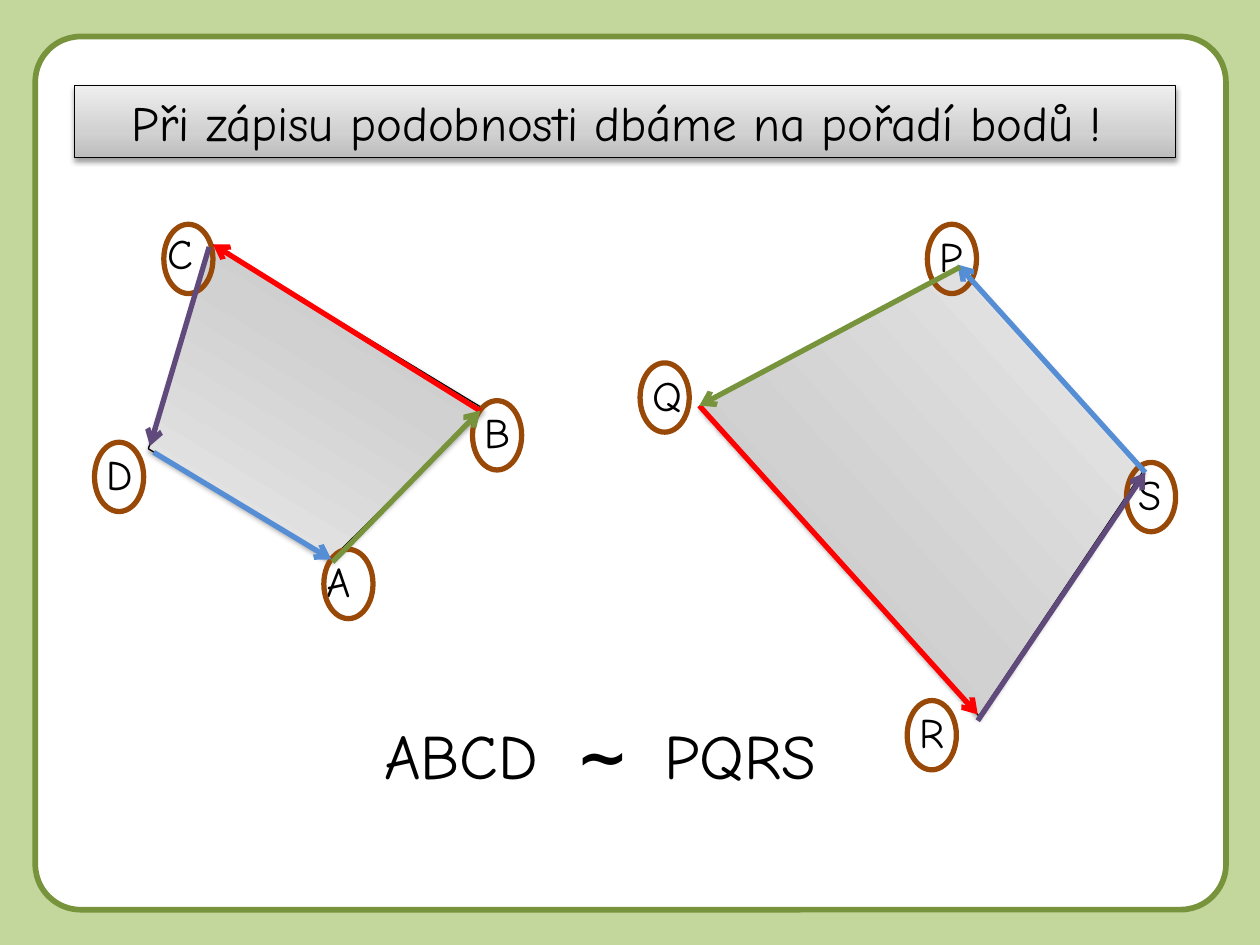
"""Build a slide on the order of points when writing similarity."""
from copy import deepcopy
from typing import NamedTuple

from lxml.etree import SubElement as Sub
from pptx import Presentation as Deck
from pptx.dml.color import RGBColor as Rgb
from pptx.enum.shapes import MSO_CONNECTOR as Link, MSO_SHAPE as Kind
from pptx.enum.text import MSO_ANCHOR as Anchor, MSO_AUTO_SIZE as Fit, PP_ALIGN as Align
from pptx.oxml.ns import qn
from pptx.util import Inches, Pt

COLS, ROWS = 100, 75
WIDE, HIGH = Inches(10), Inches(7.5)
FONT = "Comic Neue"
BLACK, WHITE = Rgb(0, 0, 0), Rgb(255, 255, 255)
PALE = Rgb(0xC3, 0xD6, 0x9B)
GREEN = Rgb(0x77, 0x93, 0x3C)
BROWN = Rgb(0x98, 0x48, 0x07)
RED = Rgb(0xFF, 0, 0)
BLUE = Rgb(0x55, 0x8E, 0xD5)
PURPLE = Rgb(0x60, 0x4A, 0x7B)
STEEL = ((0, Rgb(0xBD, 0xBD, 0xBD)), (0.35, Rgb(0xD1, 0xD1, 0xD1)), (1, Rgb(0xEE, 0xEE, 0xEE)))


class Box(NamedTuple):
    col: float
    row: float
    cols: float
    rows: float

    def size(self) -> tuple[int, ...]:
        return (*place(self.col, self.row), *place(self.cols, self.rows))


class Corner(NamedTuple):
    name: str
    col: float
    row: float
    left: float = 0
    up: float = 0


class Figure(NamedTuple):
    box: Box
    turn: float


class Arrow(NamedTuple):
    start: tuple[float, float]
    end: tuple[float, float]
    color: Rgb


CORNERS = (
    Corner("A", 25.7, 43.6, 0.8), Corner("B", 37.5, 31.8),
    Corner("C", 13, 17.8, 0.7, 0.2), Corner("D", 7.5, 35.1),
    Corner("P", 73.6, 17.8), Corner("Q", 50.8, 28.8),
    Corner("R", 72, 55.6), Corner("S", 89.4, 36.7),
)
FIGURES = (
    Figure(Box(10.7, 24.7, 25.2, 16.5), 211.2),
    Figure(Box(58.5, 25.5, 33.1, 22.8), 47.9),
)
ARROWS = (
    Arrow((38.1, 32.6), (16.9, 19.4), RED), Arrow((55.5, 32.2), (77.6, 56.7), RED),
    Arrow((12.2, 35.9), (26.3, 44.4), BLUE), Arrow((90.9, 37.5), (76, 21), BLUE),
    Arrow((26.4, 44.6), (38.1, 32.6), GREEN), Arrow((76.2, 21.2), (55.5, 32.2), GREEN),
    Arrow((16.6, 19.6), (11.9, 35.4), PURPLE), Arrow((77.6, 57.2), (90.9, 37.5), PURPLE),
)


def place(col: float, row: float) -> tuple[int, int]:
    return round(WIDE * col / COLS), round(HIGH * row / ROWS)


def style(run, size: float, face: str = FONT, bold: bool = False) -> None:
    run.font.size, run.font.name, run.font.bold = Pt(size), face, bold
    run.font.color.rgb = BLACK


def edge(item, color: Rgb, width: float) -> None:
    item.line.color.rgb, item.line.width = color, Pt(width)


def steel(shape) -> None:
    shape.fill.gradient()
    shape.fill.gradient_angle = 90
    props = shape._element.spPr
    stops = props.find(".//" + qn("a:gsLst"))
    stops.append(deepcopy(stops[0]))
    for stop, (spot, color) in zip(shape.fill.gradient_stops, STEEL):
        stop.position, stop.color.rgb = spot, color
    edge(shape, BLACK, 0.75)
    glow = Sub(Sub(props, qn("a:effectLst")), qn("a:outerShdw"), blurRad=str(Pt(3.1)),
               dist=str(Pt(1.6)), dir="5400000", rotWithShape="0")
    tint = Sub(glow, qn("a:srgbClr"), val="000000")
    Sub(tint, qn("a:alpha"), val="38000")


def shape(slide, kind: Kind, box: Box):
    return slide.shapes.add_shape(kind, *box.size())


def panel(slide) -> None:
    card = shape(slide, Kind.ROUNDED_RECTANGLE, Box(2.8, 2.9, 94.5, 69.3))
    card.adjustments[0] = 0.052
    card.shadow.inherit = False
    card.fill.solid()
    card.fill.fore_color.rgb = WHITE
    edge(card, GREEN, 3.25)
    tree = slide.shapes._spTree
    tree.remove(card._element)
    tree.insert(2, card._element)


def title(slide) -> None:
    head = slide.shapes.title
    head.left, head.top, head.width, head.height = Box(5.9, 6.8, 87.4, 5.7).size()
    steel(head)
    frame = head.text_frame
    frame.text = "Při zápisu podobnosti dbáme na pořadí bodů ! "
    frame.auto_size, frame.vertical_anchor = Fit.NONE, Anchor.MIDDLE
    frame.paragraphs[0].alignment = Align.CENTER
    style(frame.paragraphs[0].runs[0], 28)


def label(slide, spot: Corner) -> None:
    box = Box(spot.col - spot.left, spot.row - spot.up, 6.3, 5)
    frame = slide.shapes.add_textbox(*box.size()).text_frame
    frame.word_wrap = True
    frame.text = spot.name
    style(frame.paragraphs[0].runs[0], 24)


def result(slide) -> None:
    box = Box(29.5, 56.4, 37.8, 7.1)
    frame = slide.shapes.add_textbox(*box.size()).text_frame
    frame.word_wrap = True
    line = frame.paragraphs[0]
    parts = (("ABCD", FONT), (" ", FONT), ("∼", "Arial"), (" ", "Arial"), ("PQRS", FONT))
    for text, face in parts:
        run = line.add_run()
        run.text = text
        style(run, 36, face, face == "Arial")
        if text == " ":
            run.font._element.set("spc", "1000")


def solid(slide, item: Figure) -> None:
    body = shape(slide, Kind.TRAPEZOID, item.box)
    body.rotation = item.turn
    steel(body)


def ring(slide, spot: Corner) -> None:
    oval = shape(slide, Kind.OVAL, Box(spot.col, spot.row, 3.9, 5.5))
    oval.shadow.inherit = False
    oval.fill.background()
    edge(oval, BROWN, 3)


def arrow(slide, item: Arrow) -> None:
    line = slide.shapes.add_connector(Link.STRAIGHT, *place(*item.start), *place(*item.end))
    edge(line, item.color, 3)
    props = line._element.spPr
    Sub(props.find(qn("a:ln")), qn("a:tailEnd"), type="arrow")
    Sub(props, qn("a:effectLst"))


def main() -> None:
    deck = Deck()
    deck.slide_width, deck.slide_height = WIDE, HIGH
    slide = deck.slides.add_slide(deck.slide_layouts[5])
    slide.background.fill.solid()
    slide.background.fill.fore_color.rgb = PALE
    panel(slide)
    title(slide)
    result(slide)
    for draw, items in ((label, CORNERS), (solid, FIGURES), (ring, CORNERS), (arrow, ARROWS)):
        for item in items:
            draw(slide, item)
    deck.save("out.pptx")


if __name__ == "__main__":
    main()
